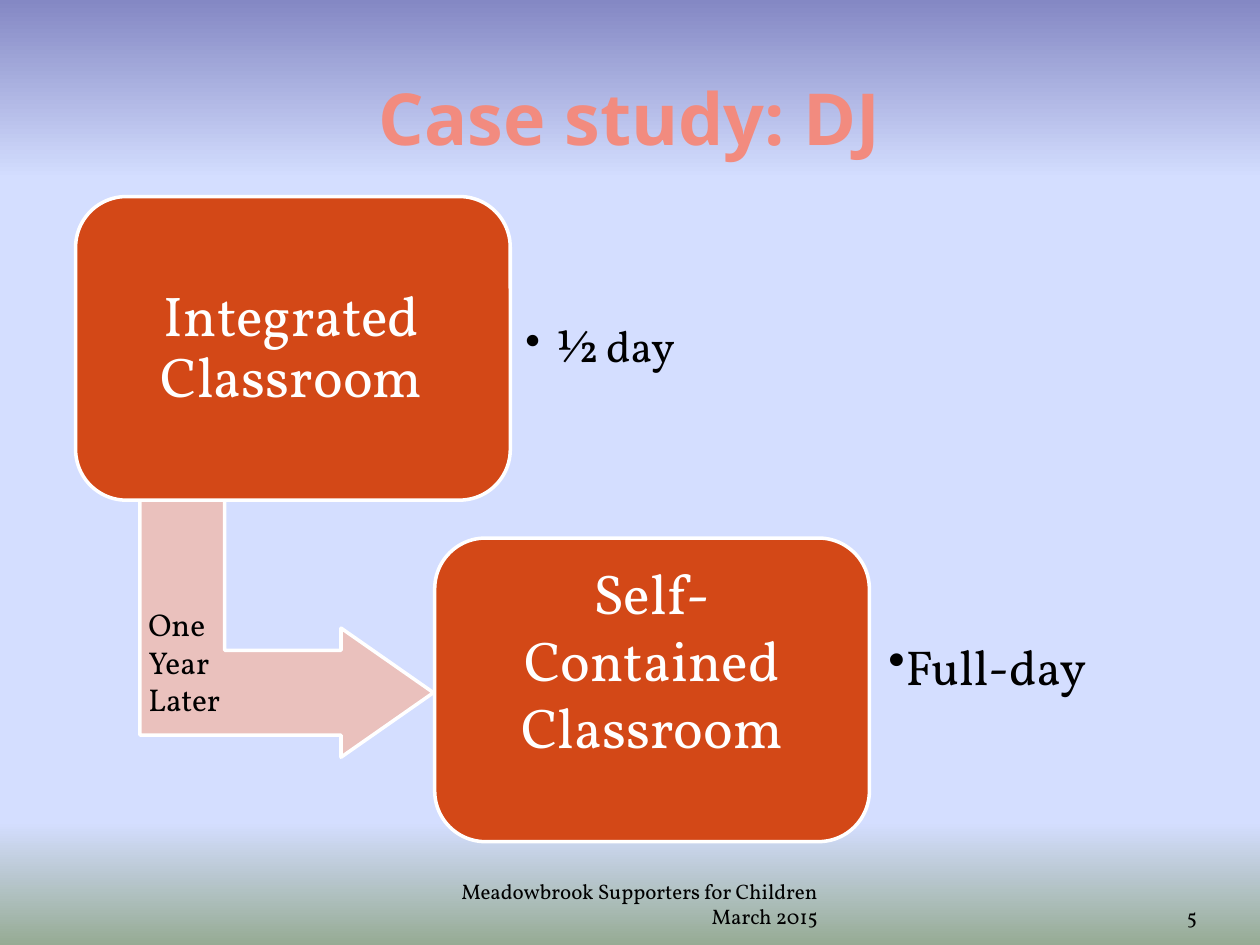
from dataclasses import dataclass

from lxml import etree
from pptx import Presentation
from pptx import util as u
from pptx.dml.color import RGBColor
from pptx.enum import shapes, text
from pptx.oxml.ns import qn

BODY_FONT = "Vollkorn"
WHITE, BLACK = "FFFFFF", "000000"
CARD_FILL, ARROW_FILL, TITLE_COLOR = "D34817", "EAC1BD", "F28B7F"
BACKGROUND_STOPS = [(0, "8488C4"), (19, "D4DEFF"), (87, "D4DEFF"), (100, "96AB94")]
CARD_SIZE = (3.45, 2.41)
LABEL_SIZE = (3.21, 2.18)
DETAIL_SIZE = (2.51, 1.95)
LEFT, CENTER, RIGHT = text.PP_ALIGN.LEFT, text.PP_ALIGN.CENTER, text.PP_ALIGN.RIGHT
TOP, MIDDLE, BOTTOM = text.MSO_ANCHOR.TOP, text.MSO_ANCHOR.MIDDLE, text.MSO_ANCHOR.BOTTOM


@dataclass
class Label:
    lines: list[str]
    box: tuple[float, float, float, float]
    size: float
    color: str = BLACK
    font: str = BODY_FONT
    bold: bool = False
    align: text.PP_ALIGN = LEFT
    anchor: text.MSO_ANCHOR = MIDDLE
    insets: tuple[float, float, float, float] = (0.1, 0.05, 0.1, 0.05)
    spacing: float = 1.0
    bullet_indent: float | None = None


@dataclass
class Block:
    kind: shapes.MSO_SHAPE
    box: tuple[float, float, float, float]
    fill: str
    adjustments: tuple[float, ...]
    rotation: float = 0


def color(value: str) -> RGBColor:
    return RGBColor.from_string(value)


def paint_background(slide) -> None:
    fill = slide.background.fill
    fill.gradient()
    fill.gradient_angle = 270
    stop_list = slide._element.find(".//" + qn("a:gsLst"))
    for stop in list(stop_list):
        stop_list.remove(stop)
    for percent, value in BACKGROUND_STOPS:
        stop = etree.SubElement(stop_list, qn("a:gs"), pos=str(percent * 1000))
        etree.SubElement(stop, qn("a:srgbClr"), val=value)


def add_bullet(paragraph, indent: float) -> None:
    properties = paragraph._p.get_or_add_pPr()
    properties.set("marL", str(u.Inches(indent)))
    properties.set("indent", str(u.Inches(-indent)))
    etree.SubElement(properties, qn("a:buChar"), char="•")


def add_block(slide, block: Block) -> None:
    shape = slide.shapes.add_shape(block.kind, *map(u.Inches, block.box))
    shape.shadow.inherit = False
    shape.rotation = block.rotation
    for index, value in enumerate(block.adjustments):
        shape.adjustments[index] = value
    shape.fill.solid()
    shape.fill.fore_color.rgb = color(block.fill)
    shape.line.color.rgb = color(WHITE)
    shape.line.width = u.Pt(2)


def add_label(slide, label: Label) -> None:
    frame = slide.shapes.add_textbox(*map(u.Inches, label.box)).text_frame
    frame.word_wrap = True
    frame.vertical_anchor = label.anchor
    (frame.margin_left, frame.margin_top,
     frame.margin_right, frame.margin_bottom) = map(u.Inches, label.insets)
    for index, line in enumerate(label.lines):
        paragraph = frame.add_paragraph() if index else frame.paragraphs[0]
        paragraph.alignment = label.align
        paragraph.line_spacing = label.spacing
        if label.bullet_indent is not None:
            add_bullet(paragraph, label.bullet_indent)
        run = paragraph.add_run()
        run.text = line
        run.font.name = label.font
        run.font.size = u.Pt(label.size)
        run.font.bold = label.bold
        run.font.color.rgb = color(label.color)


def card(left: float, top: float) -> Block:
    return Block(shapes.MSO_SHAPE.ROUNDED_RECTANGLE, (left, top, *CARD_SIZE), CARD_FILL, (0.167,))


BLOCKS = [
    Block(shapes.MSO_SHAPE.BENT_UP_ARROW, (1.25, 3.82, 2.05, 2.33), ARROW_FILL,
          (0.328, 0.25, 0.358), 90),
    card(0.6, 1.56),
    card(3.45, 4.27),
]

LABELS = [
    Label(["Case study: DJ"], (0.5, 0.3, 9, 1.25), 41, TITLE_COLOR, "Noto Sans", True, CENTER),
    Label(["Integrated Classroom"], (0.71, 1.68, *LABEL_SIZE), 32, WHITE, align=CENTER,
          insets=(0.13,) * 4, spacing=0.9),
    Label(["½ day"], (4.04, 1.79, *DETAIL_SIZE), 25, insets=(0.13,) * 4, spacing=0.9,
          bullet_indent=0.25),
    Label(["Self-Contained Classroom"], (3.57, 4.39, *LABEL_SIZE), 32, WHITE, align=CENTER,
          anchor=TOP, insets=(0.13, 0.04, 0.13, 0.13)),
    Label(["Full-day"], (6.9, 4.5, *DETAIL_SIZE), 28, insets=(0.15, 0.15, 0.15, 0.53),
          bullet_indent=0),
    Label(["Meadowbrook Supporters for Children March 2015"], (3.42, 7.02, 3.17, 0.4), 12,
          align=RIGHT, anchor=BOTTOM),
    Label(["5"], (8.67, 7.02, 0.83, 0.4), 12, align=RIGHT, anchor=BOTTOM,
          insets=(0, 0.05, 0, 0.05)),
    Label(["One", "Year", "Later"], (1.08, 4.75, 0.78, 1.01), 18, anchor=TOP),
]


def main() -> None:
    presentation = Presentation()
    presentation.slide_width = u.Inches(10)
    presentation.slide_height = u.Inches(7.5)
    slide = presentation.slides.add_slide(presentation.slide_layouts[6])
    paint_background(slide)
    for block in BLOCKS:
        add_block(slide, block)
    for label in LABELS:
        add_label(slide, label)
    presentation.save("out.pptx")


if __name__ == "__main__":
    main()
